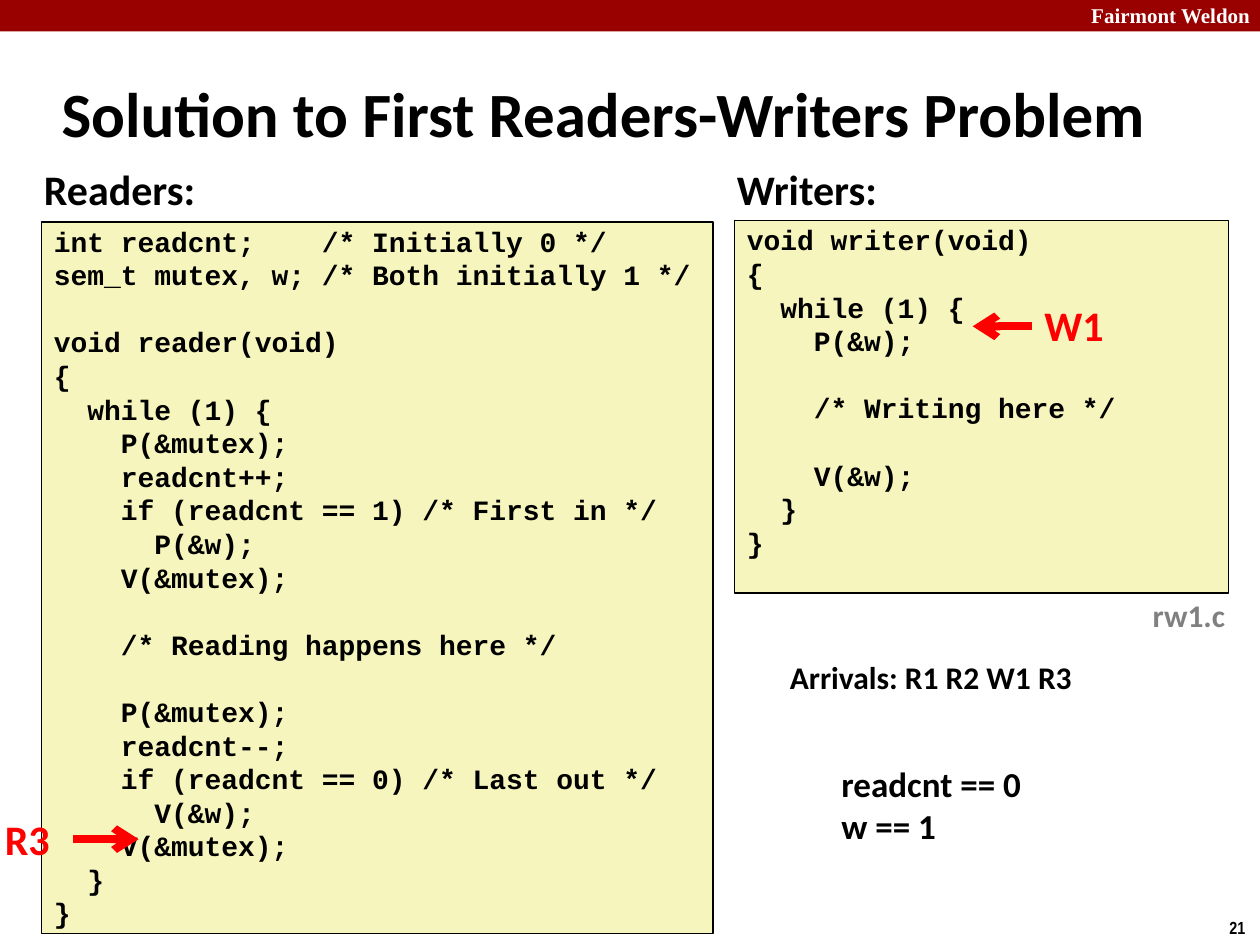
from lxml import etree
from pptx import Presentation
from pptx.dml.color import RGBColor
from pptx.enum import shapes, text
from pptx.oxml.ns import qn
from pptx.util import Inches, Pt


def paint(color, value):
    color.rgb = RGBColor.from_string(value)


def label(words, left, top, width, height, size, face="Calibri", hue="000000", wrap=False):
    box = slide.shapes.add_textbox(Inches(left), Inches(top), Inches(width), Inches(height))
    frame = box.text_frame
    frame.word_wrap = wrap
    frame.text = words
    for para in frame.paragraphs:
        font = para.font
        font.name, font.size, font.bold = face, Pt(size), True
        paint(font.color, hue)
    return frame


reader = """int readcnt;    /* Initially 0 */
sem_t mutex, w; /* Both initially 1 */

void reader(void)
{
  while (1) {
    P(&mutex);
    readcnt++;
    if (readcnt == 1) /* First in */
      P(&w);
    V(&mutex);

    /* Reading happens here */

    P(&mutex);
    readcnt--;
    if (readcnt == 0) /* Last out */
      V(&w);
    V(&mutex);
  }
}"""
writer = """void writer(void)
{
  while (1) {
    P(&w);

    /* Writing here */

    V(&w);
  }
}"""

deck = Presentation()
deck.slide_width, deck.slide_height = Inches(10), Inches(7.5)
slide = deck.slides.add_slide(deck.slide_layouts[6])

bar = slide.shapes.add_shape(shapes.MSO_SHAPE.RECTANGLE, 0, 0, Inches(10), Inches(0.25))
bar.shadow.inherit = False
bar.fill.solid()
paint(bar.fill.fore_color, "990000")
bar.line.fill.background()

school = label("Fairmont Weldon", 8.3, -0.03, 1.72, 0.3, 12, "Times New Roman", "FFFFFF")
school.paragraphs[0].alignment = text.PP_ALIGN.RIGHT
label("21", 9.66, 7.23, 0.34, 0.27, 10, "Arial Narrow")
title = label("Solution to First Readers-Writers Problem", 0.39, 0.48, 9.36, 0.83, 36, wrap=True)
title.vertical_anchor = text.MSO_ANCHOR.MIDDLE

pitch = Pt(19.2)
for code, left, top, width, height in (
    (reader, 0.33, 1.76, 5.33, 5.65),
    (writer, 5.83, 1.75, 3.92, 2.96),
):
    panel = slide.shapes.add_shape(
        shapes.MSO_SHAPE.RECTANGLE, Inches(left), Inches(top), Inches(width), Inches(height))
    panel.shadow.inherit = False
    panel.fill.solid()
    paint(panel.fill.fore_color, "F6F5BD")
    paint(panel.line.color, "000000")
    panel.line.width = Pt(1)
    frame = panel.text_frame
    frame.vertical_anchor = text.MSO_ANCHOR.TOP
    frame.margin_top, frame.margin_bottom = Inches(0.02), 0
    lines = code.split("\n")
    frame.text = "\n".join(line for line in lines if line)
    starts = [i for i, line in enumerate(lines) if line]
    for para, start in zip(frame.paragraphs, starts):
        para.alignment = text.PP_ALIGN.LEFT
        para.line_spacing = pitch
        if start and not lines[start - 1]:
            para.space_before = pitch
        font = para.font
        font.name, font.size, font.bold = "Courier New", Pt(16), True
        paint(font.color, "000000")

label("Readers:", 0.25, 1.25, 1.41, 0.5, 24)
label("Writers:", 5.75, 1.25, 1.32, 0.5, 24)
label("rw1.c", 9.05, 4.68, 0.78, 0.4, 18, hue="808080")
label("Arrivals: R1 R2 W1 R3", 6.17, 5.17, 2.46, 0.4, 18)
label("readcnt == 0\nw == 1", 6.58, 6, 1.64, 0.77, 20)

red = "FF0000"
for name, left, top, width, start, end, level in (
    ("W1", 8.19, 2.33, 0.75, 8.19, 7.72, 2.59),
    ("R3", -0.06, 6.41, 0.64, 0.58, 1.1, 6.66),
):
    label(name, left, top, width, 0.5, 24, hue=red)
    arrow = slide.shapes.add_connector(
        shapes.MSO_CONNECTOR.STRAIGHT, Inches(start), Inches(level), Inches(end), Inches(level))
    paint(arrow.line.color, red)
    arrow.line.width = Pt(4.5)
    etree.SubElement(arrow.line._get_or_add_ln(), qn("a:tailEnd"), type="arrow")
    etree.SubElement(arrow._element.spPr, qn("a:effectLst"))

deck.save("out.pptx")
